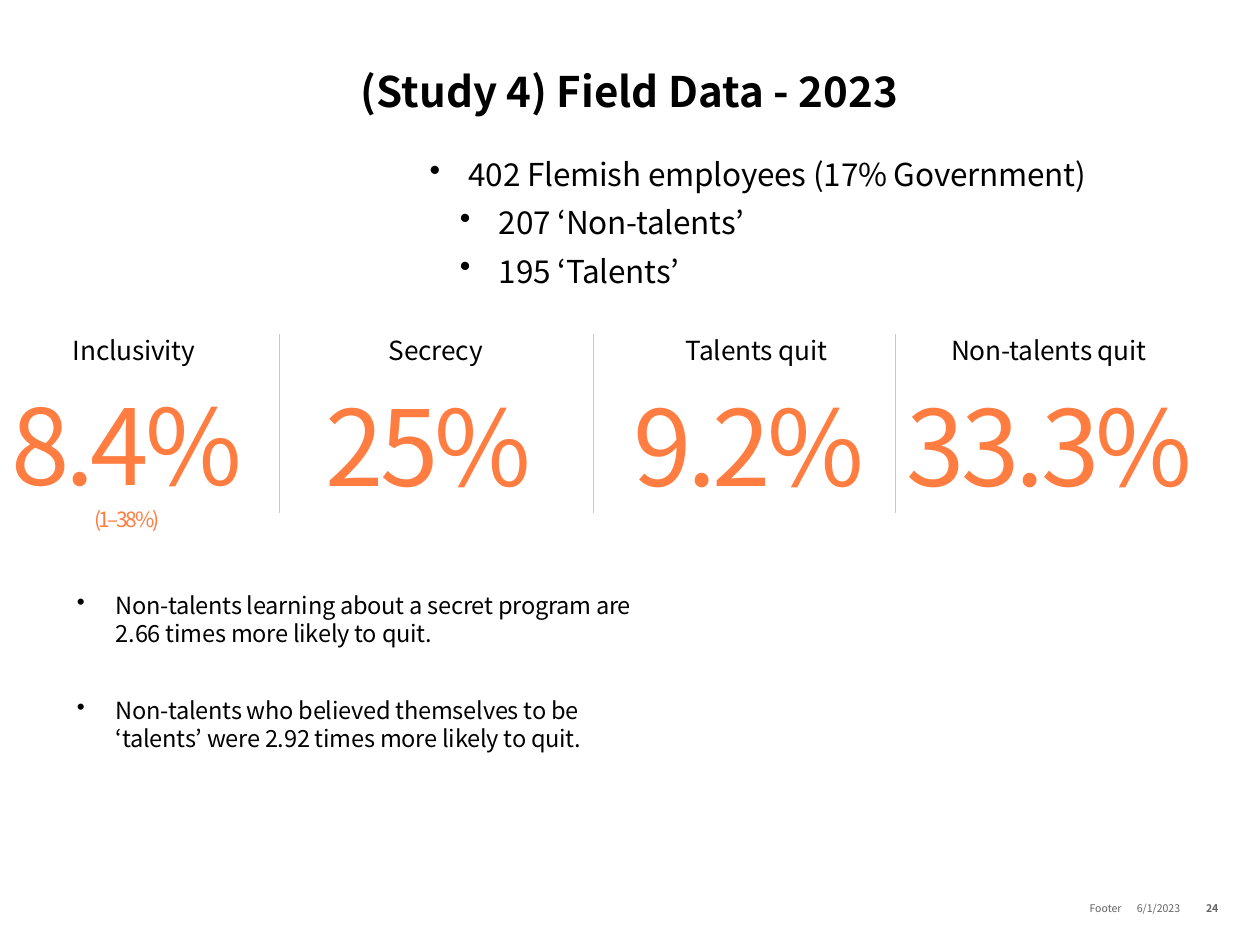
import pptx
import pptx.dml.color
import pptx.enum.shapes
import pptx.enum.text
import pptx.oxml
import pptx.oxml.ns
import pptx.util

Inches = pptx.util.Inches
Pt = pptx.util.Pt
Align = pptx.enum.text.PP_ALIGN
Anchor = pptx.enum.text.MSO_ANCHOR

THEME = {
    "font": "Noto Sans CJK KR",
    "colors": {"text": "000000", "accent": "FF7D41", "footer": "626262", "rule": "C9C9C9"},
    "sizes": {"title": 24, "sample": 18, "label": 15, "value": 60, "range": 12, "finding": 13.5, "footer": 6},
}


def add_text(bounds, text, size, color="text", bold=False, spacing=0, anchor=Anchor.TOP, **paragraph_format):
    shape = slide.shapes.add_textbox(*[Inches(length) for length in bounds])
    frame = shape.text_frame
    frame_format = {"word_wrap": True, "vertical_anchor": anchor, "margin_left": 0,
                    "margin_right": 0, "margin_top": 0, "margin_bottom": 0}
    for name, value in frame_format.items():
        setattr(frame, name, value)
    paragraph = frame.paragraphs[0]
    for name, value in paragraph_format.items():
        setattr(paragraph, name, value)
    add_run(paragraph, text, size, color, bold, spacing)
    return frame


def add_run(paragraph, text, size, color="text", bold=False, spacing=0):
    run = paragraph.add_run()
    run.text = text
    font_format = {"name": THEME["font"], "size": Pt(THEME["sizes"][size]), "bold": bold}
    for name, value in font_format.items():
        setattr(run.font, name, value)
    run.font.color.rgb = pptx.dml.color.RGBColor.from_string(THEME["colors"][color])
    properties = run._r.get_or_add_rPr()
    properties.set("spc", str(round(spacing * 100)))
    for tag in ("a:ea", "a:cs"):
        properties.append(pptx.oxml.parse_xml(
            f'<{tag} {pptx.oxml.ns.nsdecls("a")} typeface="{THEME["font"]}"/>'))


presentation = pptx.Presentation()
presentation.slide_width = Inches(10)
presentation.slide_height = Inches(7.5)
slide = presentation.slides.add_slide(presentation.slide_layouts[6])

add_text((0.33, 0.52, 9.33, 0.63), "(Study 4) Field Data - 2023", "title", bold=True,
         alignment=Align.CENTER)

footers = [
    (5.65, 3.25, "Footer", Align.RIGHT, False),
    (8.96, 0.47, "6/1/2023", Align.CENTER, False),
    (9.43, 0.24, "24", Align.RIGHT, True),
]
for left, width, text, alignment, bold in footers:
    add_text((left, 7.06, width, 0.2), text, "footer", "footer", bold,
             anchor=Anchor.BOTTOM, alignment=alignment)

metrics = [
    ("Inclusivity", 0.21, 1.71, "8.4%", 0, 2.01, 1.36),
    ("Secrecy", 2.22, 2.48, "25%", 1.92, 2.96, 1.18),
    ("Talents quit", 5.09, 1.83, "9.2%", 4.79, 2.3, 1.18),
    ("Non-talents quit", 7.18, 2.29, "33.3%", 7.18, 2.3, 1.18),
]
for label, label_left, label_width, value, value_left, value_width, value_height in metrics:
    add_text((label_left, 2.65, label_width, 0.35), label, "label", spacing=-0.1,
             alignment=Align.CENTER)
    frame = add_text((value_left, 2.94, value_width, value_height), value, "value", "accent",
                     spacing=-2.2, anchor=Anchor.MIDDLE, alignment=Align.CENTER, space_after=Pt(4.5))
    if label == "Inclusivity":
        frame.paragraphs[0].add_line_break()
        add_run(frame.paragraphs[0], "(1–38%)", "range", "accent", spacing=-1.4)

for left in (2.22, 4.71, 7.11):
    divider = slide.shapes.add_connector(pptx.enum.shapes.MSO_CONNECTOR.STRAIGHT,
                                         Inches(left), Inches(2.65), Inches(left), Inches(4.07))
    divider.line.color.rgb = pptx.dml.color.RGBColor.from_string(THEME["colors"]["rule"])
    divider.line.width = Pt(0.5)
    divider._element.spPr.append(
        pptx.oxml.parse_xml(f'<a:effectLst {pptx.oxml.ns.nsdecls("a")}/>'))

bullet_lists = [
    ((3.41, 1.23, 5.43, 1.42), "sample", 6, [
        (0, 0.31, "402 Flemish employees (17% Government)"),
        (1, 0.55, "207 ‘Non-talents’"),
        (1, 0.55, "195 ‘Talents’"),
    ]),
    ((0.61, 4.69, 4.49, 1.4), "finding", 27.5, [
        (0, 0.31, "Non-talents learning about a secret program are 2.66 times more likely to quit."),
        (0, 0.31, "Non-talents who believed themselves to be ‘talents’ were 2.92 times more likely to quit."),
    ]),
]
for bounds, size, gap, items in bullet_lists:
    frame = add_text(bounds, items[0][2], size, spacing=-0.1)
    for level, indent, text in items[1:]:
        add_run(frame.add_paragraph(), text, size, spacing=-0.1)
    for paragraph, (level, indent, text) in zip(frame.paragraphs, items):
        properties = paragraph._p.get_or_add_pPr()
        properties.set("marL", str(Inches(indent)))
        properties.set("indent", str(Inches(-0.31)))
        properties.append(pptx.oxml.parse_xml(
            f'<a:buChar {pptx.oxml.ns.nsdecls("a")} char="•"/>'))
        paragraph_format = {"level": level, "space_after": Pt(gap)}
        for name, value in paragraph_format.items():
            setattr(paragraph, name, value)

presentation.save("out.pptx")
